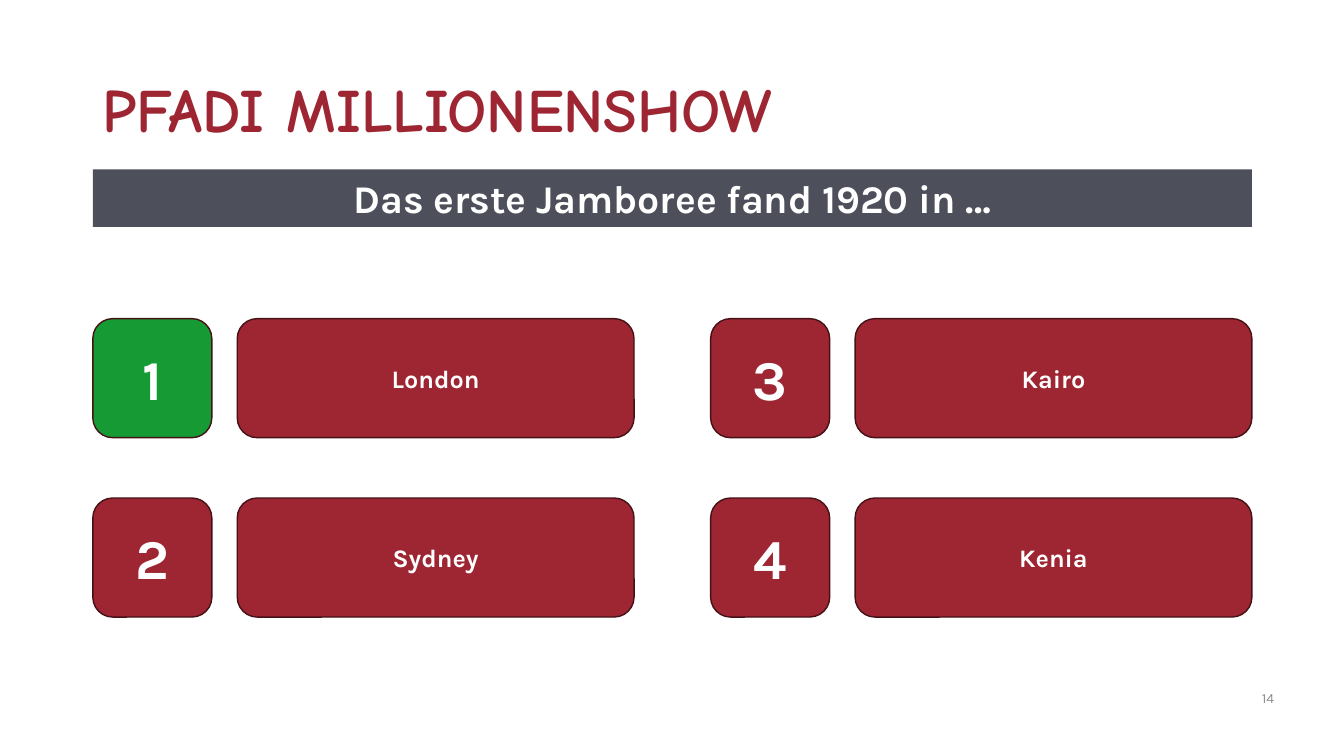
import pptx
import pptx.util
import pptx.dml.color
import pptx.enum.shapes
import pptx.enum.text
from dataclasses import dataclass

Cm, Pt = pptx.util.Cm, pptx.util.Pt
SHAPE = pptx.enum.shapes.MSO_SHAPE
ALIGN = pptx.enum.text.PP_ALIGN
ANCHOR = pptx.enum.text.MSO_ANCHOR

TITLE = "PFADI MILLIONENSHOW"
QUESTION = "Das erste Jamboree fand 1920 in …"
ANSWERS = ["London", "Sydney", "Kairo", "Kenia"]
CORRECT = "London"
PAGE = "14"


@dataclass(frozen=True)
class Theme:
    title_font: str = "Comic Neue"
    body_font: str = "Karla"
    red: str = "9D2632"
    green: str = "159A34"
    slate: str = "4D4F5A"
    outline: str = "451116"
    white: str = "FFFFFF"
    grey: str = "8C8C8C"
    title_size: int = 44
    question_size: int = 28
    number_size: int = 40
    answer_size: int = 18
    page_size: int = 10


THEME = Theme()

# Lengths in centimetres
LEFT, WIDTH = 2.34, 29.21
ROWS = 2
GRID_TOP, ROW_PITCH = 8.03, 4.52
TILE, GAP, ANSWER_WIDTH = 3, 0.64, 10
COLUMN_PITCH = WIDTH - TILE - GAP - ANSWER_WIDTH


def rgb(value):
    return pptx.dml.color.RGBColor.from_string(value)


def write(sp, text, size, color, font=THEME.body_font, bold=True,
          align=ALIGN.CENTER, anchor=ANCHOR.MIDDLE):
    tf = sp.text_frame
    tf.text = text
    tf.word_wrap = True
    tf.vertical_anchor = anchor
    p = tf.paragraphs[0]
    p.alignment = align
    f = p.runs[0].font
    f.name, f.size, f.bold = font, Pt(size), bold
    f.color.rgb = rgb(color)
    return p


def add_box(slide, kind, left, top, width, height, fill, line=None):
    sp = slide.shapes.add_shape(kind, Cm(left), Cm(top), Cm(width), Cm(height))
    sp.shadow.inherit = False
    sp.fill.solid()
    sp.fill.fore_color.rgb = rgb(fill)
    if line:
        sp.line.color.rgb = rgb(line)
        sp.line.width = Pt(1)
    else:
        sp.line.fill.background()
    return sp


def add_answer(slide, index, answer):
    column, row = divmod(index, ROWS)
    left = LEFT + column * COLUMN_PITCH
    top = GRID_TOP + row * ROW_PITCH
    number_fill = THEME.green if answer == CORRECT else THEME.red
    parts = [
        (left, TILE, number_fill, str(index + 1), THEME.number_size),
        (left + TILE + GAP, ANSWER_WIDTH, THEME.red, answer, THEME.answer_size),
    ]
    for x, width, fill, text, size in parts:
        sp = add_box(slide, SHAPE.ROUNDED_RECTANGLE, x, top, width, TILE,
                     fill, THEME.outline)
        write(sp, text, size, THEME.white)


def main():
    prs = pptx.Presentation()
    prs.slide_width, prs.slide_height = Cm(33.87), Cm(19.05)
    slide = prs.slides.add_slide(prs.slide_layouts[5])

    title = slide.shapes.title
    title.left, title.top = Cm(LEFT), Cm(0.99)
    title.width, title.height = Cm(WIDTH), Cm(3.68)
    p = write(title, TITLE, THEME.title_size, THEME.red,
              font=THEME.title_font, align=ALIGN.LEFT)
    p.line_spacing = 0.9

    banner = add_box(slide, SHAPE.RECTANGLE, LEFT, 4.27, WIDTH, 1.45, THEME.slate)
    write(banner, QUESTION, THEME.question_size, THEME.white, anchor=ANCHOR.TOP)

    for index, answer in enumerate(ANSWERS):
        add_answer(slide, index, answer)

    page = slide.shapes.add_textbox(Cm(LEFT + WIDTH), Cm(17.07), Cm(2.32), Cm(1.02))
    write(page, PAGE, THEME.page_size, THEME.grey, bold=False, align=ALIGN.LEFT)

    prs.save("out.pptx")


if __name__ == "__main__":
    main()
